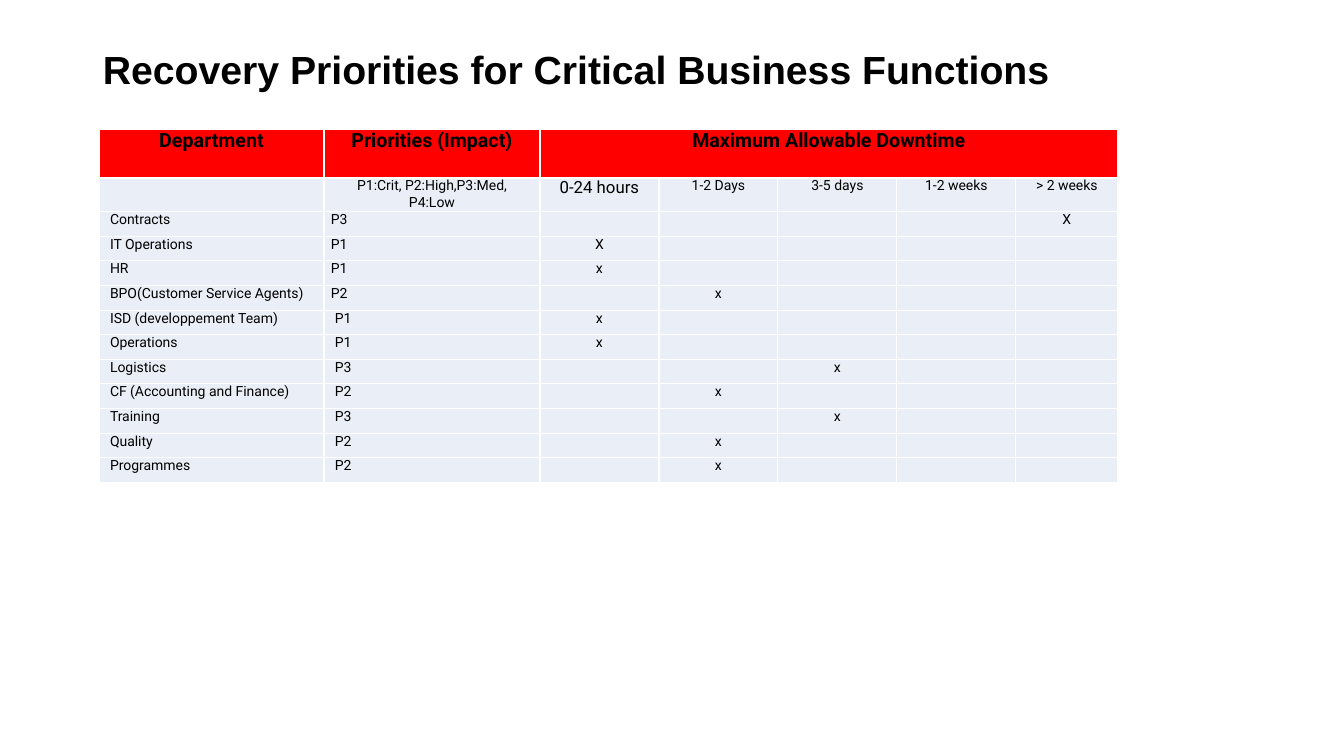
import pptx
import pptx.dml.color
import pptx.enum.text
import pptx.oxml
import pptx.oxml.ns
import pptx.util

PX = 914400 / 100.8
THEME = {
    "text": "000000", "header": "FF0000", "body": "EAEFF7", "border": "FFFFFF",
    "title_font": "Arial", "table_font": "Roboto",
    "title_size": 28, "header_size": 14, "first_period_size": 12, "body_size": 10,
}
ALIGN = pptx.enum.text.PP_ALIGN
ANCHOR = pptx.enum.text.MSO_ANCHOR


def px(length):
    return pptx.util.Emu(round(length * PX))


def style_paragraph(paragraph, name, size, bold, align):
    paragraph.alignment = align
    paragraph.font.name = name
    paragraph.font.size = pptx.util.Pt(size)
    paragraph.font.bold = bold
    paragraph.font.color.rgb = pptx.dml.color.RGBColor.from_string(THEME["text"])


presentation = pptx.Presentation()
presentation.slide_width = px(1344)
presentation.slide_height = px(756)
slide = presentation.slides.add_slide(presentation.slide_layouts[6])

# Title
title = slide.shapes.add_textbox(px(93), px(36), px(1211), px(71))
title.text_frame.word_wrap = True
title.text_frame.vertical_anchor = ANCHOR.MIDDLE
title_paragraph = title.text_frame.paragraphs[0]
title_paragraph.text = "Recovery Priorities for Critical Business Functions"
title_paragraph.line_spacing = 0.9
style_paragraph(title_paragraph, THEME["title_font"], THEME["title_size"], True, ALIGN.LEFT)

# Table content: department, priority, allowable downtime period, mark
periods = ["0-24 hours", "1-2 Days", "3-5 days", "1-2 weeks", "> 2 weeks"]
departments = [
    ("Contracts", "P3", "> 2 weeks", "X"),
    ("IT Operations", "P1", "0-24 hours", "X"),
    ("HR", "P1", "0-24 hours", "x"),
    ("BPO(Customer Service Agents)", "P2", "1-2 Days", "x"),
    ("ISD (developpement Team)", "P1", "0-24 hours", "x"),
    ("Operations", "P1", "0-24 hours", "x"),
    ("Logistics", "P3", "3-5 days", "x"),
    ("CF (Accounting and Finance)", "P2", "1-2 Days", "x"),
    ("Training", "P3", "3-5 days", "x"),
    ("Quality", "P2", "1-2 Days", "x"),
    ("Programmes", "P2", "1-2 Days", "x"),
]
rows = [
    ["Department", "Priorities (Impact)", "Maximum Allowable Downtime", "", "", "", ""],
    ["", "P1:Crit, P2:High,P3:Med, P4:Low"] + periods,
]
for department, priority, downtime, mark in departments:
    rows.append([department, priority] + [mark if period == downtime else "" for period in periods])

# Table grid: department rows share their height evenly
column_widths = [225, 216, 119, 119, 119, 119, 102]
departments_height = 271
edges = [round(departments_height * i / len(departments)) for i in range(len(departments) + 1)]
row_heights = [49, 33] + [bottom - top for top, bottom in zip(edges, edges[1:])]
table = slide.shapes.add_table(
    len(rows), len(column_widths), px(99), px(129), px(sum(column_widths)), px(sum(row_heights))
).table
table.first_row = False
table.horz_banding = False
for column, width in zip(table.columns, column_widths):
    column.width = px(width)
for row, height in zip(table.rows, row_heights):
    row.height = px(height)
table.cell(0, 2).merge(table.cell(0, 6))

# Cells
for row_index, row in enumerate(rows):
    for column_index, text in enumerate(row):
        cell = table.cell(row_index, column_index)
        is_header = row_index == 0
        is_label = row_index > 1 and column_index < 2
        cell.margin_left = cell.margin_right = px(7)
        cell.margin_top = cell.margin_bottom = 0
        if row_index == 1 and column_index == 1:
            cell.margin_left = cell.margin_right = px(18)
        elif is_label and (column_index == 0 or row_index > 5):
            cell.margin_left = px(11)
        cell.vertical_anchor = ANCHOR.TOP
        cell.fill.solid()
        cell.fill.fore_color.rgb = pptx.dml.color.RGBColor.from_string(
            THEME["header"] if is_header else THEME["body"])

        size = THEME["header_size"] if is_header else THEME["body_size"]
        if text == periods[0]:
            size = THEME["first_period_size"]
        paragraph = cell.text_frame.paragraphs[0]
        if text:
            paragraph.text = text
        else:
            paragraph._p.get_or_add_endParaRPr().set("sz", str(size * 100))
        style_paragraph(paragraph, THEME["table_font"], size, is_header,
                        ALIGN.LEFT if is_label else ALIGN.CENTER)

        # White one-point border on every side
        properties = cell._tc.get_or_add_tcPr()
        for position, side in enumerate(["lnL", "lnR", "lnT", "lnB"]):
            properties.insert(position, pptx.oxml.parse_xml(
                f'<a:{side} {pptx.oxml.ns.nsdecls("a")} w="12700"><a:solidFill>'
                f'<a:srgbClr val="{THEME["border"]}"/></a:solidFill></a:{side}>'))

presentation.save("out.pptx")
